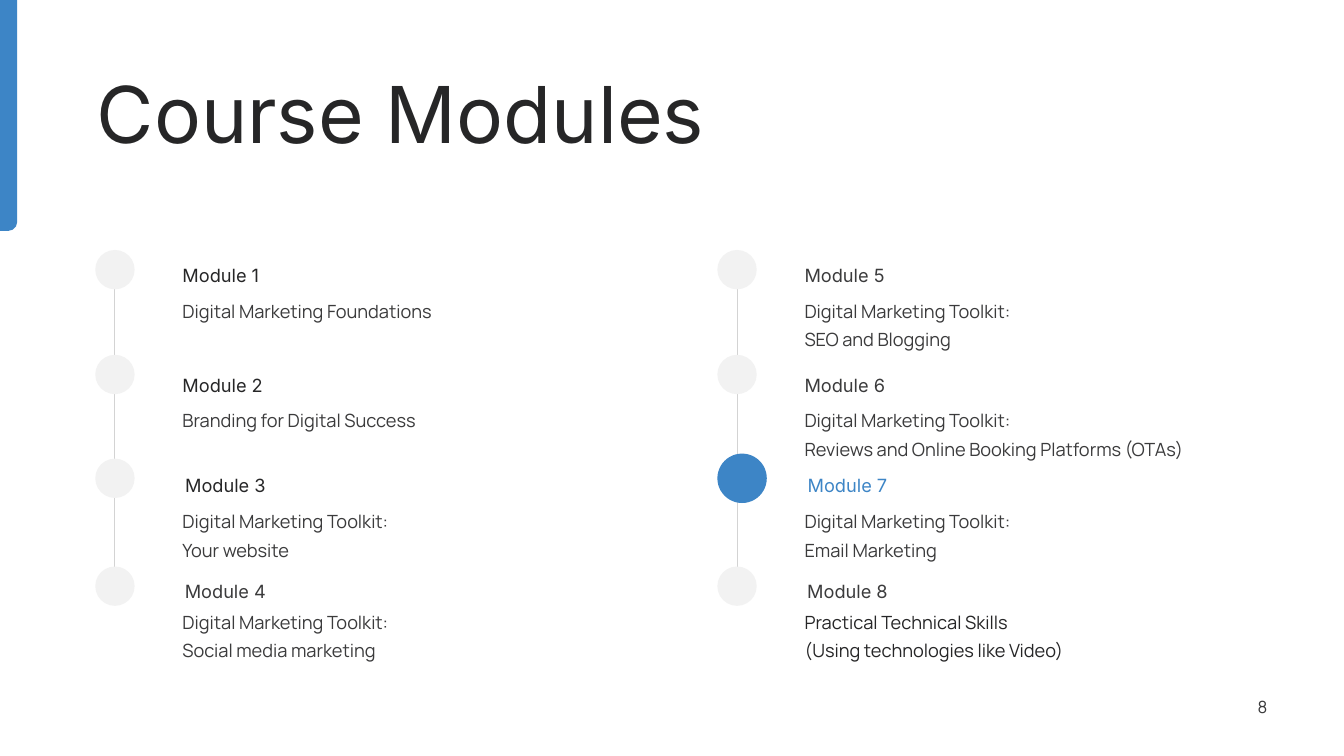
from dataclasses import dataclass

from lxml.etree import SubElement
from pptx import Presentation
from pptx.dml.color import RGBColor
from pptx.enum.shapes import MSO_CONNECTOR, MSO_SHAPE
from pptx.enum.text import MSO_ANCHOR, MSO_AUTO_SIZE, PP_ALIGN
from pptx.oxml.ns import qn
from pptx.slide import Slide
from pptx.text.text import TextFrame
from pptx.util import Inches, Pt

BLUE = RGBColor(0x3D, 0x85, 0xC6)
DARK = RGBColor(0x26, 0x26, 0x27)
GREY = RGBColor(0x3B, 0x3B, 0x3C)
RAIL_GREY = RGBColor(0xD3, 0xD3, 0xD3)
DOT_GREY = RGBColor(0xF2, 0xF2, 0xF2)

HEADING_FONT = "Inter"
BODY_FONT = "Manrope"

RAIL_X = 1.14
TEXT_X = 1.81
COLUMN_SHIFT = 6.17
DOT_SIZE = 0.39
CURRENT_DOT_SIZE = 0.49


@dataclass
class Row:
    dot_top: float
    heading_top: float
    heading_width: float
    heading_align: PP_ALIGN
    topic_top: float
    topic_width: float


@dataclass
class Module:
    topic: str
    heading_color: RGBColor = GREY
    topic_color: RGBColor = GREY
    current: bool = False


ROWS = [
    Row(2.48, 2.56, 1.22, PP_ALIGN.LEFT, 2.91, 2.97),
    Row(3.52, 3.65, 1.02, PP_ALIGN.LEFT, 4.0, 4.1),
    Row(4.55, 4.64, 0.85, PP_ALIGN.CENTER, 5.0, 2.29),
    Row(5.62, 5.69, 0.85, PP_ALIGN.CENTER, 6.0, 2.82),
]

MODULES = [
    Module("Digital Marketing Foundations", DARK),
    Module("Branding for Digital Success", DARK),
    Module("Digital Marketing Toolkit: Your website", DARK),
    Module("Digital Marketing Toolkit:\nSocial media marketing"),
    Module("Digital Marketing Toolkit:\nSEO and Blogging"),
    Module("Digital Marketing Toolkit:\nReviews and Online Booking Platforms (OTAs)"),
    Module("Digital Marketing Toolkit: Email Marketing", BLUE, current=True),
    Module("Practical Technical Skills\n(Using technologies like Video)", topic_color=DARK),
]


def write(frame: TextFrame, text: str, font: str, size: float, color: RGBColor,
          spacing: float = 1.0, align: PP_ALIGN = PP_ALIGN.LEFT) -> None:
    frame.word_wrap = True
    frame.margin_left = frame.margin_right = 0
    frame.margin_top = frame.margin_bottom = 0
    paragraph = frame.paragraphs[0]
    paragraph.text = text
    paragraph.alignment = align
    paragraph.line_spacing = spacing
    for run in paragraph.runs:
        run.font.name = font
        run.font.size = Pt(size)
        run.font.color.rgb = color


def add_label(slide: Slide, left: float, top: float, width: float, text: str,
              font: str, color: RGBColor, align: PP_ALIGN = PP_ALIGN.LEFT) -> None:
    height = 0.5 if "Toolkit" in text or "\n" in text else 0.22
    label = slide.shapes.add_textbox(Inches(left), Inches(top), Inches(width), Inches(height))
    write(label.text_frame, text, font, 13, color, 1.3, align)
    label.text_frame.auto_size = MSO_AUTO_SIZE.SHAPE_TO_FIT_TEXT


def add_filled(slide: Slide, kind: MSO_SHAPE, left: float, top: float,
               width: float, height: float, color: RGBColor):
    filled = slide.shapes.add_shape(kind, Inches(left), Inches(top), Inches(width), Inches(height))
    filled.shadow.inherit = False
    filled.fill.solid()
    filled.fill.fore_color.rgb = color
    filled.line.fill.background()
    return filled


def add_rail(slide: Slide, x: float) -> None:
    rail = slide.shapes.add_connector(
        MSO_CONNECTOR.STRAIGHT, Inches(x), Inches(2.68), Inches(x), Inches(6))
    rail.line.color.rgb = RAIL_GREY
    rail.line.width = Pt(0.75)
    SubElement(rail._element.spPr, qn("a:effectLst"))


def add_module(slide: Slide, number: int, module: Module, row: Row, shift: float) -> None:
    size = CURRENT_DOT_SIZE if module.current else DOT_SIZE
    dot_top = row.dot_top - (size - DOT_SIZE) / 2
    add_filled(slide, MSO_SHAPE.OVAL, RAIL_X + shift - DOT_SIZE / 2, dot_top, size, size,
               BLUE if module.current else DOT_GREY)
    add_label(slide, TEXT_X + shift, row.heading_top, row.heading_width, f"Module {number}",
              HEADING_FONT, module.heading_color, row.heading_align)
    add_label(slide, TEXT_X + shift, row.topic_top, row.topic_width, module.topic,
              BODY_FONT, module.topic_color)


def main() -> None:
    deck = Presentation()
    deck.slide_width, deck.slide_height = Inches(13.33), Inches(7.5)
    slide = deck.slides.add_slide(deck.slide_layouts[5])

    # Accent bar, rounded at its bottom right corner
    accent_bar = add_filled(slide, MSO_SHAPE.ROUND_1_RECTANGLE, 0, 0, 0.17, 2.29, BLUE)
    accent_bar.adjustments[0] = 0.5
    accent_bar._element.spPr.xfrm.set("flipV", "1")

    # Title
    title = slide.shapes.title
    title.left, title.top = Inches(0.96), Inches(0.75)
    title.width, title.height = Inches(11.62), Inches(0.89)
    write(title.text_frame, "Course Modules", HEADING_FONT, 56, DARK, 0.9)
    title.text_frame.vertical_anchor = MSO_ANCHOR.TOP
    title.text_frame.auto_size = MSO_AUTO_SIZE.NONE

    # Two timelines of four modules
    for column in range(2):
        add_rail(slide, RAIL_X + column * COLUMN_SHIFT)
    for index, module in enumerate(MODULES):
        column, row = divmod(index, len(ROWS))
        add_module(slide, index + 1, module, ROWS[row], column * COLUMN_SHIFT)

    # Page number
    page_number = slide.shapes.add_textbox(Inches(12.08), Inches(6.81), Inches(0.49), Inches(0.4))
    write(page_number.text_frame, "8", BODY_FONT, 12, GREY, align=PP_ALIGN.RIGHT)
    page_number.text_frame.vertical_anchor = MSO_ANCHOR.MIDDLE

    deck.save("out.pptx")


if __name__ == "__main__":
    main()
